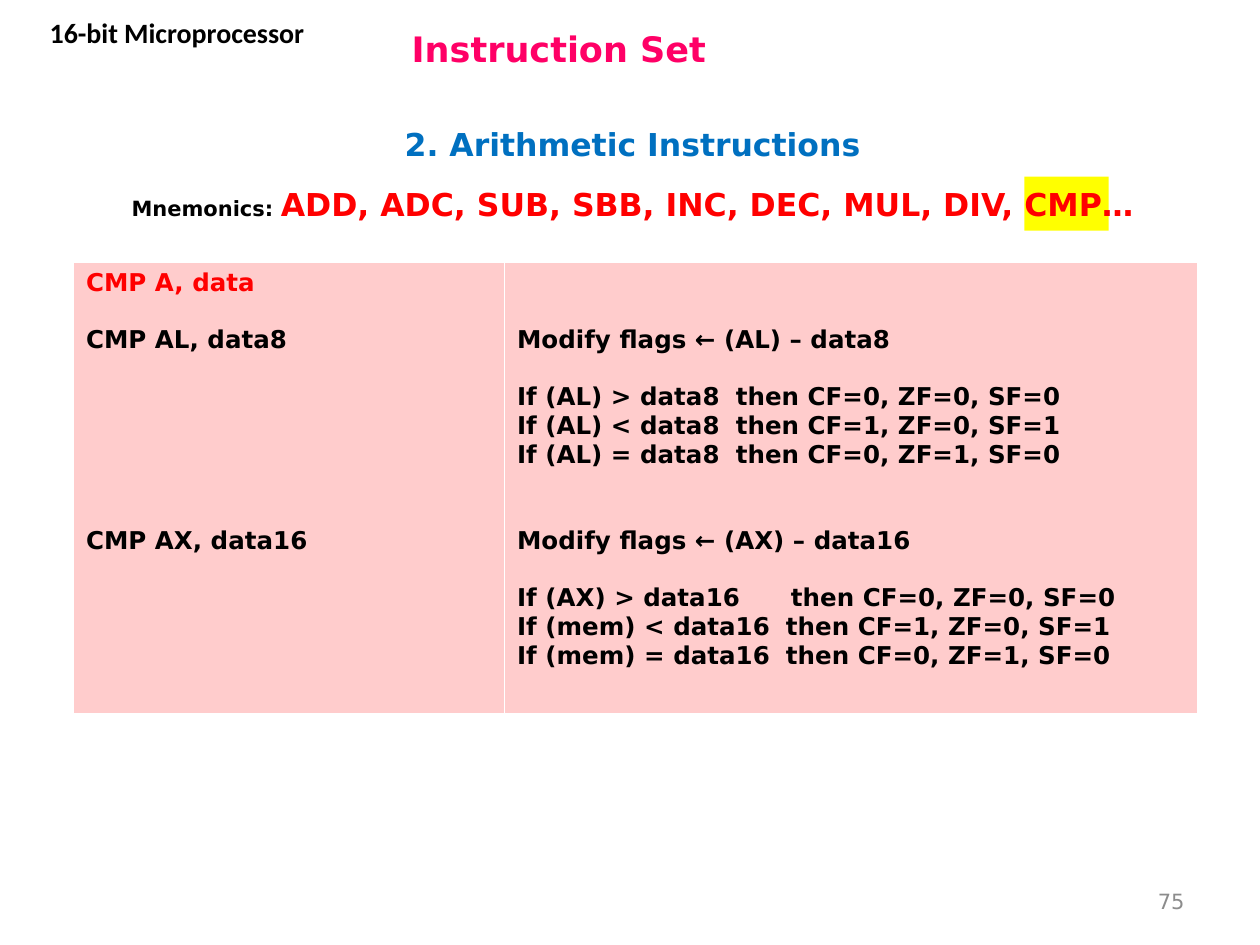
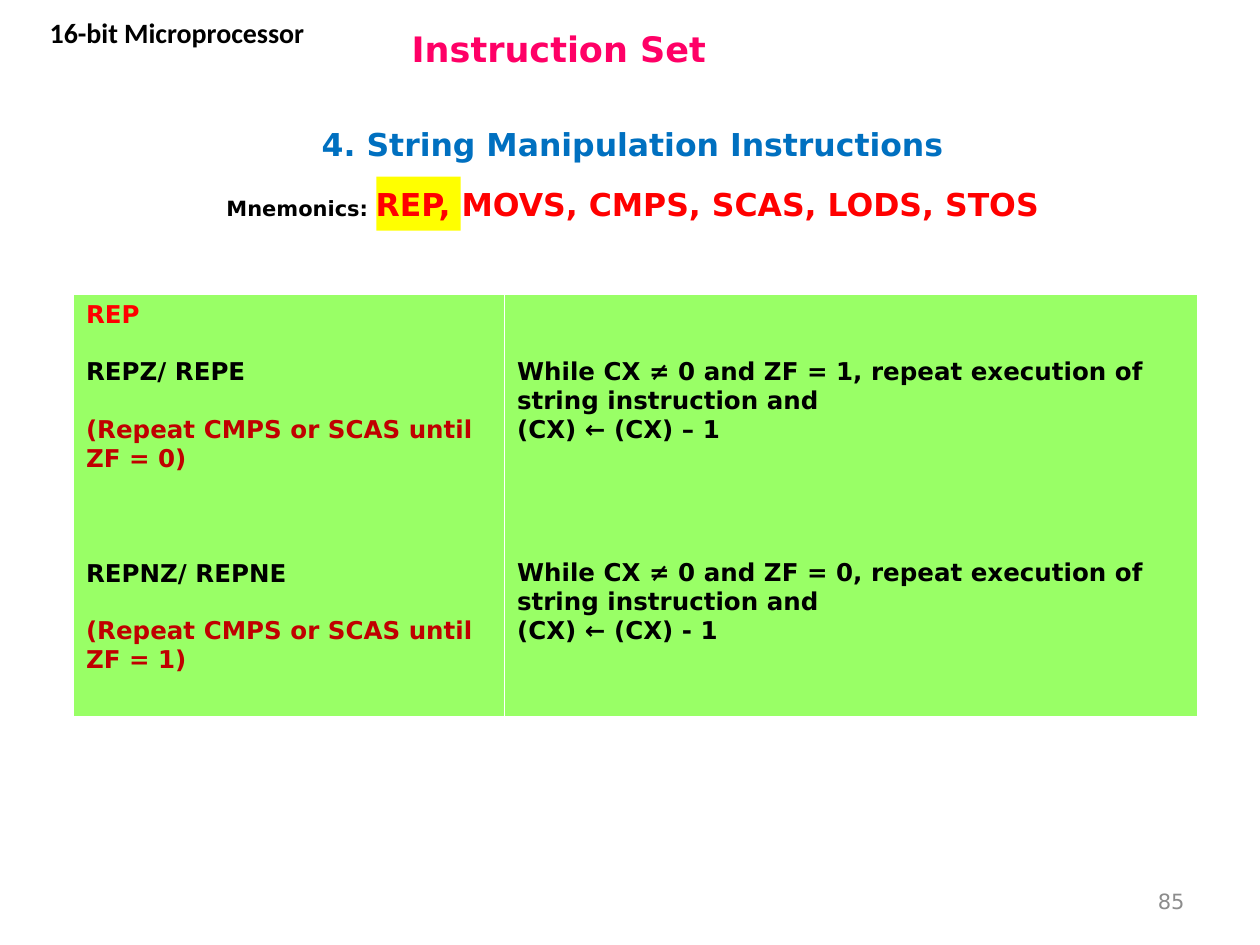
from lxml import etree
from pptx import Presentation
from pptx.dml.color import RGBColor
from pptx.enum.shapes import MSO_SHAPE
from pptx.enum.text import MSO_ANCHOR, PP_ALIGN
from pptx.oxml.ns import qn
from pptx.util import Cm, Pt

RECT = MSO_SHAPE.RECTANGLE
TOP, MID = MSO_ANCHOR.TOP, MSO_ANCHOR.MIDDLE
LEFT, CENTER, RIGHT = PP_ALIGN.LEFT, PP_ALIGN.CENTER, PP_ALIGN.RIGHT

BLACK = RGBColor(0, 0, 0)
RED = RGBColor(0xFF, 0, 0)
DARK = RGBColor(0xC0, 0, 0)
BLUE = RGBColor(0, 0x70, 0xC0)
ROSE = RGBColor(0xFF, 0, 0x66)
GRAY = RGBColor(0x8C, 0x8C, 0x8C)
YELLOW = RGBColor(0xFF, 0xFF, 0)
PINK = RGBColor(0xFF, 0xCC, 0xCC)
GREEN = RGBColor(0x99, 0xFF, 0x66)

FONT, HEAD = "DejaVu Sans", "Calibri"
LINE = 16.4  # height of one table line in points


def put(par, text, size=14, color=BLACK, bold=True, font=FONT):
    """Add one formatted run to a paragraph."""
    run = par.add_run()
    run.text = text
    face = run.font
    face.name, face.size, face.bold = font, Pt(size), bold
    face.color.rgb = color


def tab(par, stop):
    tabs = etree.SubElement(par._p.get_or_add_pPr(), qn("a:tabLst"))
    etree.SubElement(tabs, qn("a:tab"), pos=str(Cm(stop)), algn="l")


def edge(cell):
    """White cell borders, thicker at the bottom."""
    props = cell._tc.get_or_add_tcPr()
    for side, width in zip("LRTB", (1, 1, 1, 3)):
        line = etree.SubElement(props, qn("a:ln" + side), w=str(Pt(width)))
        fill = etree.SubElement(line, qn("a:solidFill"))
        etree.SubElement(fill, qn("a:srgbClr"), val="FFFFFF")


class Deck:
    def __init__(self):
        self.show = Presentation()
        self.show.slide_width, self.show.slide_height = Cm(25.4), Cm(19.05)
        self.slide = None

    def text(self, box, runs, align=LEFT, anchor=TOP):
        frame = self.slide.shapes.add_textbox(*map(Cm, box)).text_frame
        frame.word_wrap = True
        frame.vertical_anchor = anchor
        par = frame.paragraphs[0]
        par.alignment = align
        for words, form in runs:
            put(par, words, **form)

    def mark(self, left):
        shape = self.slide.shapes.add_shape(
            RECT, Cm(left), Cm(3.56), Cm(1.7), Cm(1.09))
        shape.shadow.inherit = False
        shape.fill.solid()
        shape.fill.fore_color.rgb = YELLOW
        shape.line.fill.background()

    def page(self, topic, names, number, spot):
        """Start a slide with the parts that all slides share."""
        self.slide = self.show.slides.add_slide(self.show.slide_layouts[6])
        self.mark(spot)
        self.text((0.74, 2.36, 24.03, 1.09),
                  [(topic, dict(size=18, color=BLUE))], CENTER, MID)
        self.text((8.05, 0.3, 16.71, 1.35),
                  [("Instruction Set", dict(size=20, color=ROSE))], anchor=MID)
        self.text((18.21, 17.65, 5.92, 1.02),
                  [(number, dict(size=12, color=GRAY, bold=False))], RIGHT, MID)
        self.text((0.18, 0.18, 6.78, 1.63),
                  [("16-bit Microprocessor", dict(size=16, font=HEAD))], CENTER)
        self.text((0.74, 3.61, 24.03, 1.02),
                  [("Mnemonics: ", dict(size=12)),
                   (names, dict(size=18, color=RED))], CENTER)

    def table(self, top, high, fill, sides):
        """One row; each entry is (lines skipped, text, colour, tab stop)."""
        grid = self.slide.shapes.add_table(
            1, 2, Cm(1.48), Cm(top), Cm(22.66), Cm(high)).table
        grid.first_row = grid.horz_banding = False
        for col, (wide, inset, items) in enumerate(
                zip((8.69, 13.97), (0.13, 1.28), sides)):
            grid.columns[col].width = Cm(wide)
            cell = grid.cell(0, col)
            edge(cell)
            cell.fill.solid()
            cell.fill.fore_color.rgb = fill
            cell.margin_top = Cm(inset)
            frame = cell.text_frame
            for row, (skip, words, color, stop) in enumerate(items):
                par = frame.add_paragraph() if row else frame.paragraphs[0]
                if stop:
                    tab(par, stop)
                if skip:
                    par.space_before = Pt(skip * LINE)
                put(par, words, color=color)


def item(skip, words, color=BLACK, stop=None):
    return skip, words, color, stop


def flags(skip, reg, data, others, stops):
    """The compare step, then its three outcomes."""
    yield item(skip, f"Modify flags ← ({reg}) – {data}")
    cases = ((">", "CF=0, ZF=0, SF=0"), ("<", "CF=1, ZF=0, SF=1"),
             ("=", "CF=0, ZF=1, SF=0"))
    for row, ((sign, bits), name, stop) in enumerate(
            zip(cases, (reg, others, others), stops)):
        yield item(0 if row else 1, f"If ({name}) {sign} {data}\tthen {bits}",
                   stop=stop)


def loop(skip, zero, sign):
    return [item(skip, f"While CX ≠ 0 and ZF = {zero}, repeat execution of "
                       "string instruction and"),
            item(0, f"(CX) ← (CX) {sign} 1")]


def until(skip, name, zero):
    return [item(skip, name),
            item(1, f"(Repeat CMPS or SCAS until ZF = {zero})", DARK)]


def main():
    deck = Deck()

    # Compare instructions
    deck.page("2. Arithmetic Instructions",
              "ADD, ADC, SUB, SBB, INC, DEC, MUL, DIV, CMP…", "75", 20.65)
    deck.table(5.28, 9.15, PINK, (
        [item(0, "CMP A, data", RED), item(1, "CMP AL, data8"),
         item(6, "CMP AX, data16")],
        [*flags(0, "AL", "data8", "AL", (4.41, 4.41, 4.41)),
         *flags(2, "AX", "data16", "mem", (5.52, 5.42, 5.42))]))

    # Repeat prefixes
    deck.page("4. String Manipulation Instructions",
              "REP, MOVS, CMPS, SCAS, LODS, STOS", "85", 7.59)
    deck.table(5.93, 8.56, GREEN, (
        [item(0, "REP", RED), *until(1, "REPZ/ REPE", 0),
         *until(3, "REPNZ/ REPNE", 1)],
        loop(0, 1, "–") + loop(4, 0, "-")))

    deck.show.save("out.pptx")


if __name__ == "__main__":
    main()
